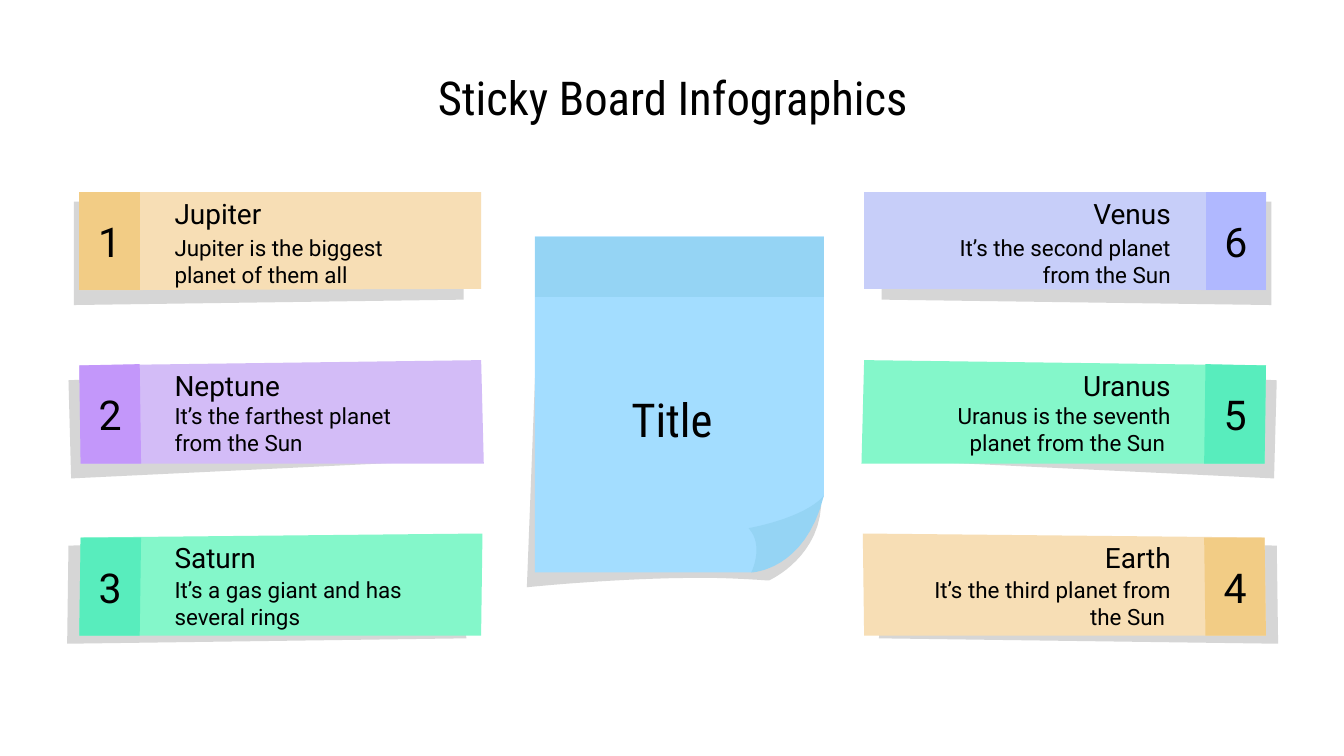
from pptx import Presentation
from pptx.dml.color import RGBColor
from pptx.enum import text
from pptx.util import Inches, Pt

COLORS = {
    "text": "000000", "shadow": "D6D6D6",
    "note": "A3DDFF", "note_dark": "95D4F4",
    "sand": "F7DEB5", "sand_dark": "F2CC85",
    "lilac": "D3BCF7", "lilac_dark": "C397FA",
    "mint": "84F7CA", "mint_dark": "58EDBD",
    "blue": "C7CEF9", "blue_dark": "B0B8FF",
}
LEFT, CENTER, RIGHT = (text.PP_ALIGN.LEFT, text.PP_ALIGN.CENTER,
                       text.PP_ALIGN.RIGHT)
CARD_W = 3.0
LABEL_W = 2.01
LABEL_INSET = 0.61

# Outlines of a left-hand card in each row, from the card's top left corner.
ROWS = [
    {"top": 1.43, "heading": 0.01,
     "shadow": [(-0.04, 0.07), (-0.04, 0.84), (2.86, 0.8), (2.86, 0.07)],
     "body": [(2.99, 0), (0, 0), (0, 0.73), (2.99, 0.72)],
     "tab": [(0.45, 0), (0, 0), (0, 0.73), (0.45, 0.73)]},
    {"top": 2.68, "heading": 0.04,
     "shadow": [(2.86, 0.01), (-0.08, 0.15), (-0.06, 0.88), (2.85, 0.74)],
     "body": [(2.99, 0), (0, 0.04), (0.01, 0.77), (3.01, 0.77)],
     "tab": [(0.45, 0.03), (0, 0.04), (0.01, 0.77), (0.46, 0.77)]},
    {"top": 3.97, "heading": 0.03,
     "shadow": [(2.84, 0.05), (-0.08, 0.09), (-0.09, 0.82), (2.88, 0.78)],
     "body": [(3, 0), (0.01, 0.03), (0, 0.76), (2.99, 0.76)],
     "tab": [(0.46, 0.03), (0.01, 0.03), (0, 0.76), (0.45, 0.76)]},
]
LEFT_CARDS = [
    ("1", "Jupiter", "Jupiter is the biggest planet of them all", "sand"),
    ("2", "Neptune", "It’s the farthest planet from the Sun", "lilac"),
    ("3", "Saturn", "It’s a gas giant and has several rings", "mint"),
]
RIGHT_CARDS = [
    ("6", "Venus", "It’s the second planet from the Sun", "blue"),
    ("5", "Uranus", "Uranus is the seventh planet from the Sun ", "mint"),
    ("4", "Earth", "It’s the third planet from the Sun ", "sand"),
]


def rgb(name):
    return RGBColor.from_string(COLORS[name])


def write(shape, words, size, align=CENTER, font="Roboto"):
    frame = shape.text_frame
    frame.word_wrap = True
    frame.auto_size = text.MSO_AUTO_SIZE.NONE
    frame.vertical_anchor = text.MSO_ANCHOR.MIDDLE
    frame.margin_left = frame.margin_right = Inches(0.1)
    frame.margin_top = frame.margin_bottom = Inches(0.1)
    paragraph = frame.paragraphs[0]
    paragraph.alignment = align
    run = paragraph.add_run()
    run.text = words
    run.font.size = Pt(size)
    run.font.name = font
    run.font.color.rgb = rgb("text")


def add_label(slide, box, words, size, align, font="Roboto"):
    label = slide.shapes.add_textbox(*(Inches(v) for v in box))
    write(label, words, size, align, font)


def add_outline(parent, left, top, points, color):
    """Draw a closed, filled outline whose points are relative to left, top."""
    corners = [(Inches(left + x), Inches(top + y)) for x, y in points]
    builder = parent.shapes.build_freeform(*corners[0], scale=1.0)
    builder.add_line_segments(corners[1:], close=True)
    outline = builder.convert_to_shape()
    outline.shadow.inherit = False
    outline.fill.solid()
    outline.fill.fore_color.rgb = rgb(color)
    outline.line.fill.background()
    return outline


def curve(start, control_1, control_2, end, steps=16):
    """Points along a cubic Bezier curve, without its start."""
    points = []
    for step in range(1, steps + 1):
        t = step / steps
        weights = ((1 - t) ** 3, 3 * t * (1 - t) ** 2, 3 * t * t * (1 - t), t ** 3)
        ends = (start, control_1, control_2, end)
        points.append(tuple(sum(w * p[axis] for w, p in zip(weights, ends))
                            for axis in (0, 1)))
    return points


def add_title(slide, left, top, width, height):
    title = slide.shapes.title
    title.left, title.top = Inches(left), Inches(top)
    title.width, title.height = Inches(width), Inches(height)
    write(title, "Sticky Board Infographics", 25, font="Roboto Condensed")


def add_card(slide, left, row, card, mirrored):
    number, heading, note, color = card
    top = row["top"]
    slip = slide.shapes.add_group_shape()
    fills = {"shadow": "shadow", "body": color, "tab": color + "_dark"}
    for part, fill in fills.items():
        points = [(CARD_W - x if mirrored else x, y) for x, y in row[part]]
        outline = add_outline(slip, left, top, points, fill)
    write(outline, number, 22)

    inset = CARD_W - LABEL_INSET - LABEL_W if mirrored else LABEL_INSET
    align = RIGHT if mirrored else LEFT
    x = left + inset
    add_label(slide, (x, top + row["heading"], LABEL_W, 0.29), heading, 15, align)
    add_label(slide, (x, top + 0.32, LABEL_W, 0.39), note, 12, align)


def add_sticky_note(slide, left, top, width, height):
    """Draw the note with its glued strip, curled corner and label."""
    strip, curl_x, curl_y = 0.45, 1.61, 1.93
    shadow = [(0.04, 0.04), (-0.06, 2.61)]
    shadow += curve((-0.06, 2.61), (-0.06, 2.61), (0.61, 2.54), (1.24, 2.54))
    shadow += curve((1.24, 2.54), (1.42, 2.54), (1.59, 2.55), (1.74, 2.56))
    shadow += curve((1.74, 2.56), (1.74, 2.56), (2.15, 2.38), (2.13, 1.93))
    shadow += curve((2.13, 1.93), (2.11, 1.49), (2.09, 0.04), (2.09, 0.04))
    sheet = [(0, 0), (0, height), (curl_x, height), (2.03, 2.16),
             (width, curl_y), (width, 0)]
    band = [(0, 0), (0, strip), (width, strip), (width, 0)]
    tip, fold, foot = (width, curl_y), (1.59, 2.17), (curl_x, height)
    curl = [tip] + curve(tip, (2, 2.1), fold, fold)
    curl += curve(fold, (1.71, 2.3), foot, foot)
    curl += curve(foot, foot, (2.01, 2.49), tip)

    note = slide.shapes.add_group_shape()
    for points, color in ((shadow, "shadow"), (sheet, "note"),
                          (band, "note_dark"), (curl, "note_dark")):
        add_outline(note, left, top, points, color)
    add_label(slide, (left + 0.17, top + 1.14, 1.7, 0.44), "Title", 25, CENTER,
              "Roboto Condensed")


def main():
    deck = Presentation()
    deck.slide_width = Inches(10)
    deck.slide_height = deck.slide_width * 9 // 16
    slide = deck.slides.add_slide(deck.slide_layouts[5])
    add_title(slide, 0.78, 0.5, 8.45, 0.44)
    add_sticky_note(slide, 3.98, 1.76, 2.15, 2.5)
    for left, cards, mirrored in ((0.59, LEFT_CARDS, False),
                                  (6.42, RIGHT_CARDS, True)):
        for row, card in zip(ROWS, cards):
            add_card(slide, left, row, card, mirrored)
    deck.save("out.pptx")


if __name__ == "__main__":
    main()
